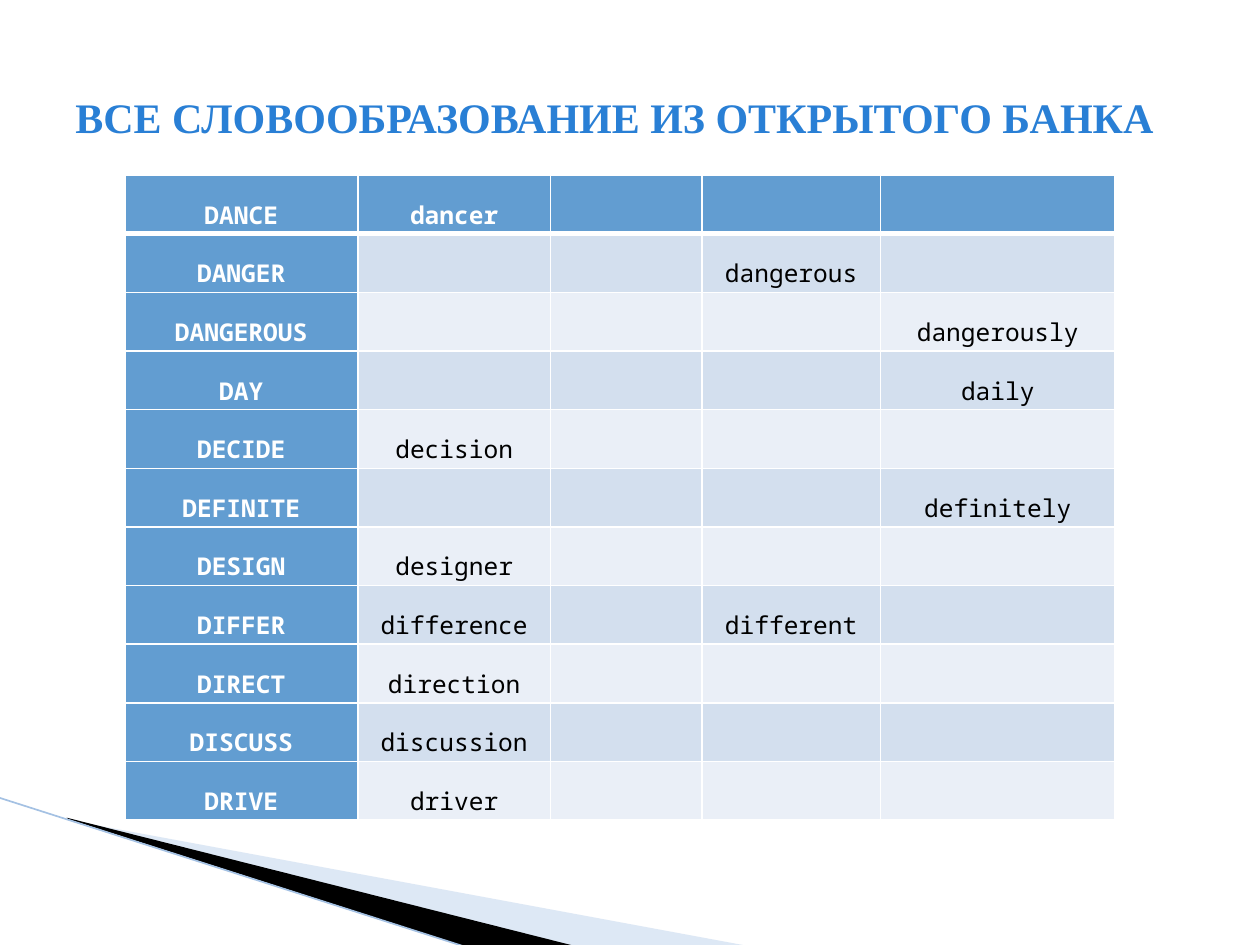
from dataclasses import dataclass

from lxml import etree
from pptx import Presentation
from pptx.dml.color import RGBColor
from pptx.enum import shapes, text
from pptx.oxml import ns
from pptx.util import Inches, Pt


@dataclass(frozen=True)
class Theme:
    accent: str = "629DD1"
    title: str = "297FD5"
    odd_row: str = "D3DFEE"
    even_row: str = "EAEFF7"
    white: str = "FFFFFF"
    black: str = "000000"
    pale_wedge: str = "ABC6E6"
    edge: str = "A4C1E3"
    title_font: str = "Times New Roman"
    table_font: str = "Noto Sans Mono"
    title_size: int = 24
    table_size: int = 14


THEME = Theme()
TITLE = "ВСЕ СЛОВООБРАЗОВАНИЕ ИЗ ОТКРЫТОГО БАНКА"
COLUMN_WIDTHS = (1.85, 1.53, 1.2, 1.42, 1.86)
TABLE_HEIGHT = 5.12
WORDS = (
    ("DANCE", "dancer", "", "", ""),
    ("DANGER", "", "", "dangerous", ""),
    ("DANGEROUS", "", "", "", "dangerously"),
    ("DAY", "", "", "", "daily"),
    ("DECIDE", "decision", "", "", ""),
    ("DEFINITE", "", "", "", "definitely"),
    ("DESIGN", "designer", "", "", ""),
    ("DIFFER", "difference", "", "different", ""),
    ("DIRECT", "direction", "", "", ""),
    ("DISCUSS", "discussion", "", "", ""),
    ("DRIVE", "driver", "", "", ""),
)


def add_element(parent, tag, **attributes):
    return etree.SubElement(parent, ns.qn(tag), attributes)


def style_font(font, name, size, color, bold):
    font.name = name
    font.size = Pt(size)
    font.bold = bold
    font.color.rgb = RGBColor.from_string(color)


def add_wedge(page, points, color, opacity=100):
    corners = [(Inches(x), Inches(y)) for x, y in points]
    builder = page.shapes.build_freeform(*corners[0])
    builder.add_line_segments(corners[1:], close=True)
    wedge = builder.convert_to_shape()
    wedge.shadow.inherit = False
    wedge.line.fill.background()
    wedge.fill.solid()
    wedge.fill.fore_color.rgb = RGBColor.from_string(color)
    if opacity < 100:
        fill_color = wedge.fill._xPr.find(".//" + ns.qn("a:srgbClr"))
        add_element(fill_color, "a:alpha", val=str(opacity * 1000))


def add_edge(page, start, end):
    ends = [Inches(value) for value in (*start, *end)]
    edge = page.shapes.add_connector(shapes.MSO_CONNECTOR.STRAIGHT, *ends)
    edge.line.color.rgb = RGBColor.from_string(THEME.edge)
    edge.line.width = Pt(0.95)
    add_element(edge._element.spPr, "a:effectLst")


def add_title(page):
    box = page.shapes.add_textbox(Inches(0.5), Inches(0.3), Inches(9), Inches(1.25))
    frame = box.text_frame
    frame.word_wrap = True
    frame.vertical_anchor = text.MSO_ANCHOR.MIDDLE
    para = frame.paragraphs[0]
    para.text = TITLE
    style_font(para.font, THEME.title_font, THEME.title_size, THEME.title, True)


def set_borders(cell, widths):
    properties = cell._tc.get_or_add_tcPr()
    for side, width in widths.items():
        line = add_element(properties, f"a:ln{side}", w=str(Pt(width)))
        fill = add_element(line, "a:solidFill")
        add_element(fill, "a:srgbClr", val=THEME.white)


def fill_cell(cell, word, row, column):
    is_heading = row == 0 or column == 0
    band = THEME.odd_row if row % 2 else THEME.even_row
    set_borders(cell, {
        "L": 1, "R": 1, "T": 3 if row == 1 else 1, "B": 3 if row == 0 else 1,
    })
    cell.fill.solid()
    cell.fill.fore_color.rgb = RGBColor.from_string(
        THEME.accent if is_heading else band)
    cell.margin_left = cell.margin_right = Inches(0.03)
    cell.margin_top = cell.margin_bottom = Inches(0.02)
    cell.vertical_anchor = text.MSO_ANCHOR.BOTTOM
    para = cell.text_frame.paragraphs[0]
    para.text = word
    para.alignment = text.PP_ALIGN.CENTER
    para.line_spacing = 1.5
    style_font(para.font, THEME.table_font, THEME.table_size,
               THEME.white if is_heading else THEME.black, is_heading)


def add_word_table(page):
    table = page.shapes.add_table(
        len(WORDS), len(COLUMN_WIDTHS), Inches(0.99), Inches(1.39),
        Inches(sum(COLUMN_WIDTHS)), Inches(TABLE_HEIGHT)).table
    for column, width in zip(table.columns, COLUMN_WIDTHS):
        column.width = Inches(width)
    for row, words in enumerate(WORDS):
        table.rows[row].height = Inches(TABLE_HEIGHT / len(WORDS))
        for column, word in enumerate(words):
            fill_cell(table.cell(row, column), word, row, column)


def main():
    deck = Presentation()
    deck.slide_width, deck.slide_height = Inches(10), Inches(7.5)
    page = deck.slides.add_slide(deck.slide_layouts[6])
    add_wedge(page, [(0.55, 6.51), (5.95, 7.51), (4.56, 7.51), (0.55, 6.5)],
              THEME.pale_wedge, opacity=40)
    add_wedge(page, [(0.53, 6.49), (4.57, 7.51), (3.72, 7.52), (0.54, 6.5)],
              THEME.black)
    add_edge(page, (-0.01, 6.33), (3.71, 7.52))
    add_word_table(page)
    add_title(page)
    deck.save("out.pptx")


if __name__ == "__main__":
    main()
